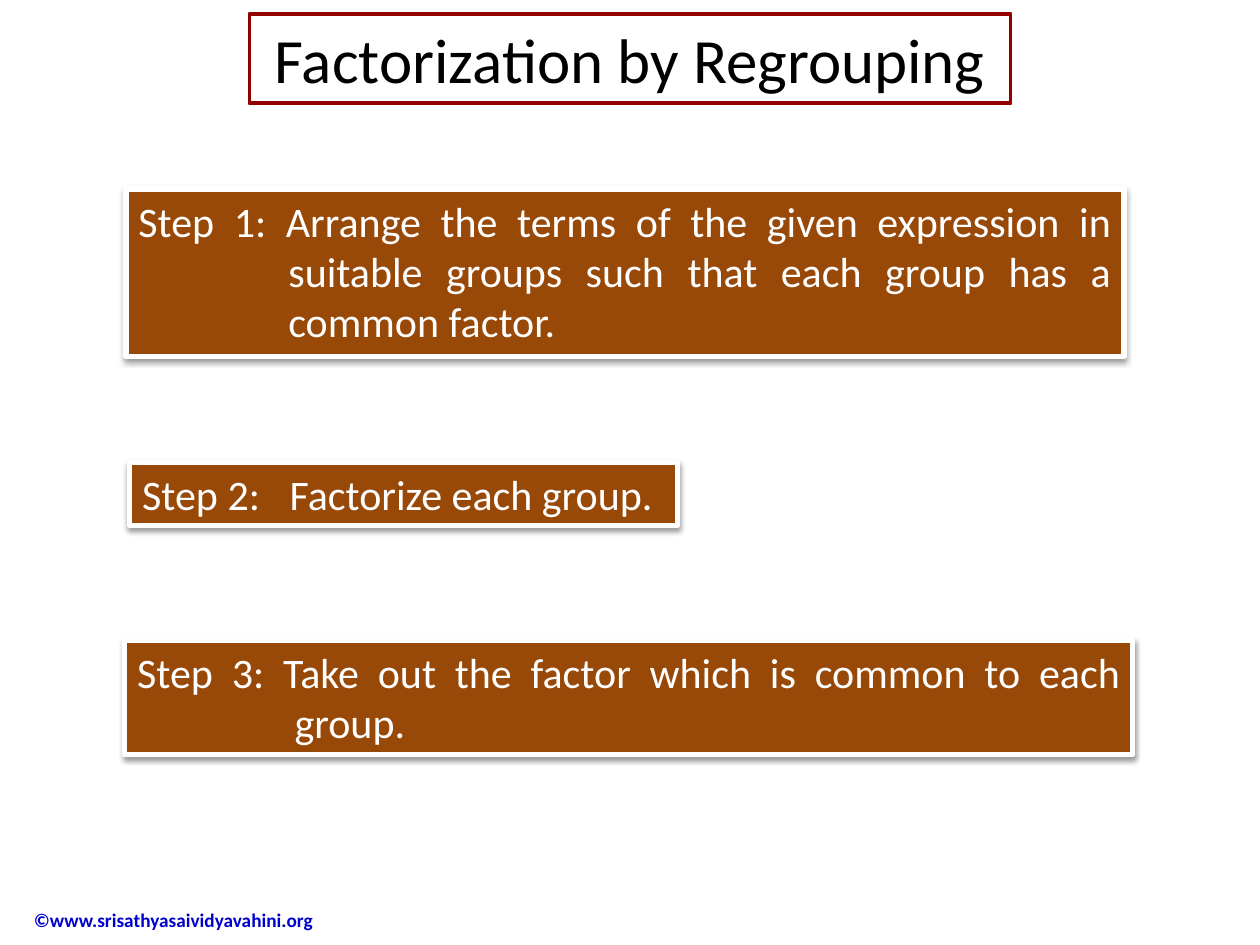
from lxml import etree
from pptx import Presentation
from pptx.dml.color import RGBColor
from pptx.enum.shapes import MSO_SHAPE
from pptx.enum.text import MSO_ANCHOR, PP_ALIGN
from pptx.oxml.ns import qn
from pptx.util import Inches, Pt

RECTANGLE = MSO_SHAPE.RECTANGLE
MIDDLE, TOP = MSO_ANCHOR.MIDDLE, MSO_ANCHOR.TOP
LEFT, CENTER, JUSTIFY = PP_ALIGN.LEFT, PP_ALIGN.CENTER, PP_ALIGN.JUSTIFY
TITLE_ONLY = 5


def color(hex_value):
    return RGBColor.from_string(hex_value)


def write(shape, text, size, hex_value, align, anchor, bold=False):
    frame = shape.text_frame
    frame.word_wrap = True
    frame.vertical_anchor = anchor
    paragraph = frame.paragraphs[0]
    paragraph.text = text
    paragraph.alignment = align
    font = paragraph.font
    font.name, font.size, font.bold = "Calibri", Pt(size), bold
    font.color.rgb = color(hex_value)
    return paragraph


prs = Presentation()
prs.slide_width, prs.slide_height = Inches(10), Inches(7.5)
slide = prs.slides.add_slide(prs.slide_layouts[TITLE_ONLY])

# Framed title, centred on the slide
title = slide.shapes.title
title.width, title.height = Inches(6.04), Inches(0.71)
title.left, title.top = (prs.slide_width - title.width) // 2, Inches(0.11)
title.line.color.rgb = color("920000")
title.line.width = Pt(2.25)
write(title, "Factorization by Regrouping", 36, "000000", CENTER, MIDDLE)

# Steps: left, top, width, height, hanging indent, alignment, text
steps = [
    (1, 1.5, 7.92, 1.33, 1.19, JUSTIFY,
     "Step 1: Arrange the terms of the given expression in suitable groups "
     "such that each group has a common factor."),
    (1.03, 3.67, 4.35, 0.5, 1.17, LEFT, "Step 2:\tFactorize each group."),
    (0.99, 5.08, 8, 0.91, 1.25, JUSTIFY,
     "Step 3: Take out the factor which is common to each group."),
]
for left, top, width, height, indent, align, text in steps:
    step = slide.shapes.add_shape(
        RECTANGLE, Inches(left), Inches(top), Inches(width), Inches(height))
    step.fill.solid()
    step.fill.fore_color.rgb = color("984807")
    step.line.color.rgb = color("FFFFFF")
    step.line.width = Pt(3)

    # Soft shadow straight below the box
    step.shadow.inherit = False
    effects = step._element.spPr.find(qn("a:effectLst"))
    shadow = etree.SubElement(
        effects, qn("a:outerShdw"), blurRad=str(Pt(3.1)), dist=str(Pt(1.6)),
        dir="5400000", rotWithShape="0")
    shadow_color = etree.SubElement(shadow, qn("a:srgbClr"), val="000000")
    etree.SubElement(shadow_color, qn("a:alpha"), val="38000")

    paragraph = write(step, text, 24, "FFFFFF", align, TOP)
    properties = paragraph._p.get_or_add_pPr()
    properties.set("marL", str(Inches(indent)))
    properties.set("indent", str(-Inches(indent)))

# Copyright line
copyright_line = slide.shapes.add_textbox(
    Inches(0.17), Inches(7.1), Inches(2.52), Inches(0.4))
write(copyright_line, "©www.srisathyasaividyavahini.org", 11, "0000CC",
      LEFT, MIDDLE, bold=True)

prs.save("out.pptx")
